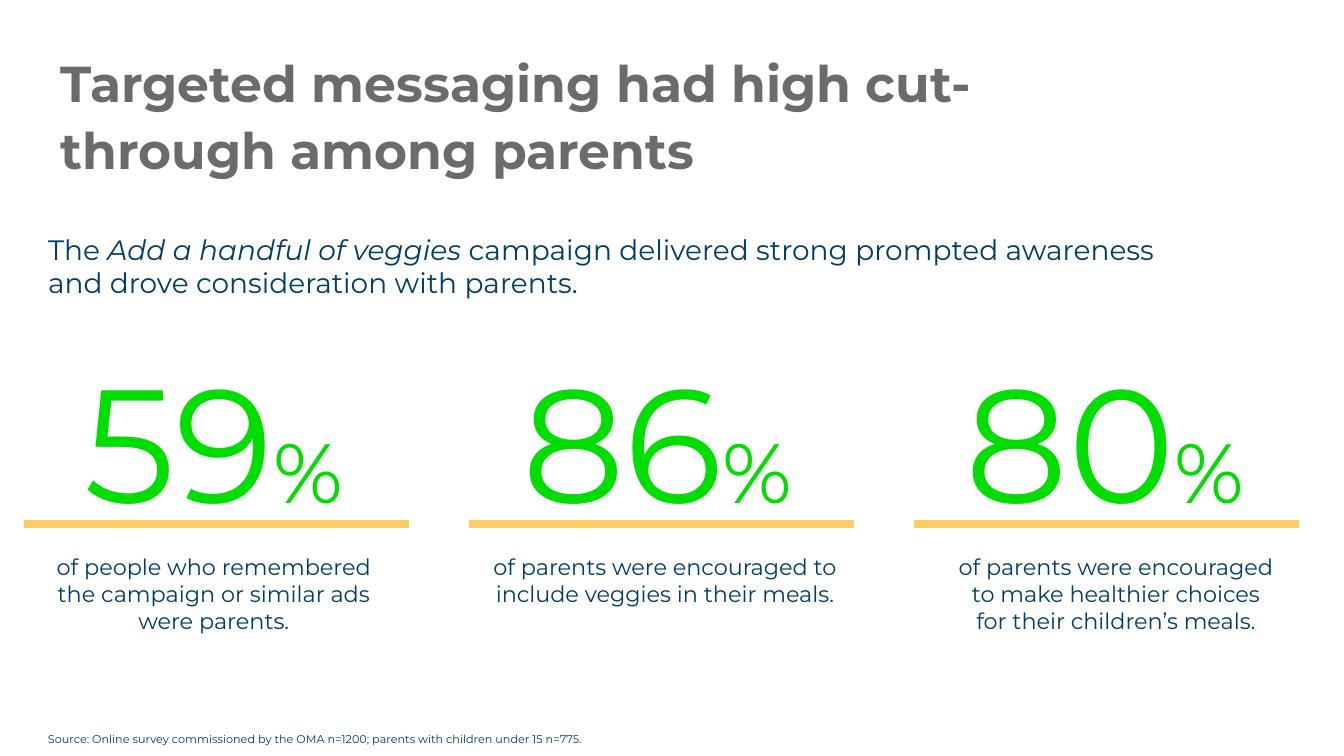
from lxml import etree
from pptx import Presentation
from pptx.dml.color import RGBColor
from pptx.enum.shapes import MSO_CONNECTOR
from pptx.enum.text import MSO_ANCHOR, PP_ALIGN as Align
from pptx.oxml.ns import qn
from pptx.util import Pt

# Content
TITLE = "Targeted messaging had high cut-through among parents"
INTRO = [
    ("The ", False),
    ("Add a handful of veggies ", True),
    ("campaign delivered strong prompted awareness "
     "and drove consideration with parents.", False),
]
SOURCE = ("Source: Online survey commissioned by the OMA n=1200; "
          "parents with children under 15 n=775.")
# Each result: number, (left, width) of it, caption, (left, width) of it
RESULTS = [
    ("59", (27.2, 251.3),
     "of people who remembered the campaign or similar ads were parents.",
     (23.2, 259.2)),
    ("86", (356.8, 225.4),
     "of parents were encouraged to include veggies in their meals.",
     (339.7, 270.7)),
    ("80", (666.7, 244.8),
     "of parents were encouraged to make healthier choices "
     "for their children’s meals.",
     (674.8, 244.8)),
]

# Style and layout, in points
COLORS = {"title": "6C6B6A", "text": "003D69",
          "number": "00DE00", "rule": "FFCC66"}
FONT = "Montserrat"
MARGIN = 27.2
NUMBER_TOP, RULE_Y, CAPTION_TOP = 241.2, 374.4, 391.7
RULE_LEFT, RULE_WIDTH, RULE_PITCH = 17.3, 274.9, 317.9


def add_text(slide, box, parts, color, align=Align.LEFT, inset=None,
             line_spacing=None):
    """Each part is a tuple: words, size, bold, italic."""
    frame = slide.shapes.add_textbox(*(Pt(n) for n in box)).text_frame
    frame.word_wrap = True
    frame.vertical_anchor = MSO_ANCHOR.TOP
    if inset is not None:
        frame.margin_left = frame.margin_right = Pt(inset)
        frame.margin_top = frame.margin_bottom = Pt(inset)
    paragraph = frame.paragraphs[0]
    paragraph.alignment = align
    if line_spacing:
        paragraph.line_spacing = line_spacing
    for words, size, bold, italic in parts:
        run = paragraph.add_run()
        run.text = words
        run.font.name = FONT
        run.font.size = Pt(size)
        run.font.bold = bold
        run.font.italic = italic
        run.font.color.rgb = RGBColor.from_string(COLORS[color])


def add_rule(slide, left):
    rule = slide.shapes.add_connector(
        MSO_CONNECTOR.STRAIGHT,
        Pt(left), Pt(RULE_Y), Pt(left + RULE_WIDTH), Pt(RULE_Y))
    rule.line.width = Pt(6)
    rule.line.color.rgb = RGBColor.from_string(COLORS["rule"])
    etree.SubElement(rule._element.spPr, qn("a:effectLst"))


def main():
    deck = Presentation()
    deck.slide_width, deck.slide_height = Pt(960), Pt(540)
    slide = deck.slides.add_slide(deck.slide_layouts[6])

    # Heading and introduction
    add_text(slide, (43.2, 33.1, 664.6, 43.2), [(TITLE, 36, True, False)],
             "title", inset=0, line_spacing=1.1)
    add_text(slide, (MARGIN, 162.3, 805, 55.4),
             [(words, 20, False, italic) for words, italic in INTRO], "text")

    # Three results, each with a number, a rule and a caption
    for column, (number, number_span, caption, caption_span) in enumerate(RESULTS):
        left, width = number_span
        add_text(slide, (left, NUMBER_TOP, width, 146.9),
                 [(number, 115, False, False), ("%", 60, False, False)],
                 "number", Align.CENTER)
        add_rule(slide, RULE_LEFT + column * RULE_PITCH)
        left, width = caption_span
        add_text(slide, (left, CAPTION_TOP, width, 65.5),
                 [(caption, 16, False, False)], "text", Align.CENTER)

    # Source line
    add_text(slide, (MARGIN, 519.5, 846.7, 17.3),
             [(SOURCE, 8, False, False)], "text")

    deck.save("out.pptx")


if __name__ == "__main__":
    main()
